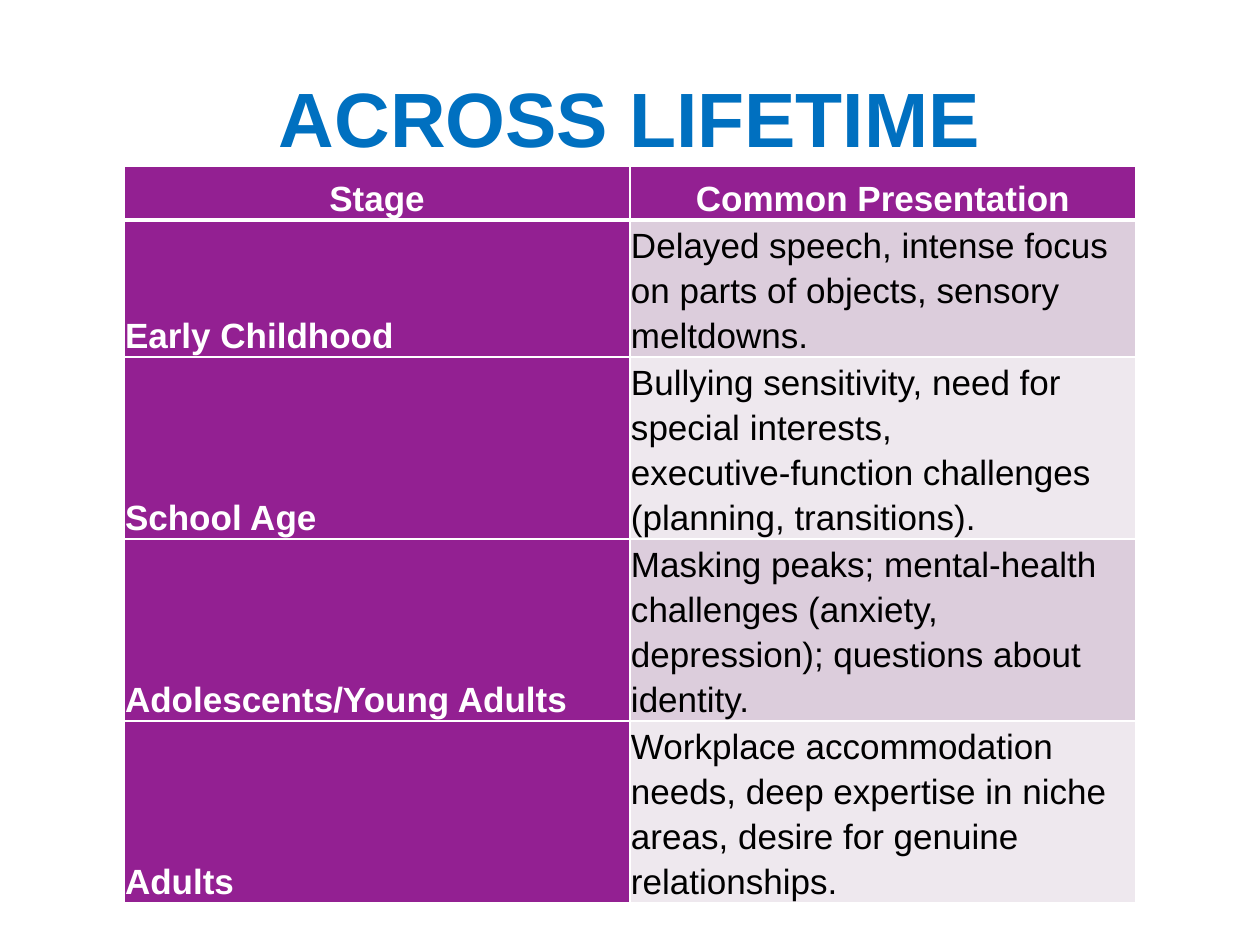
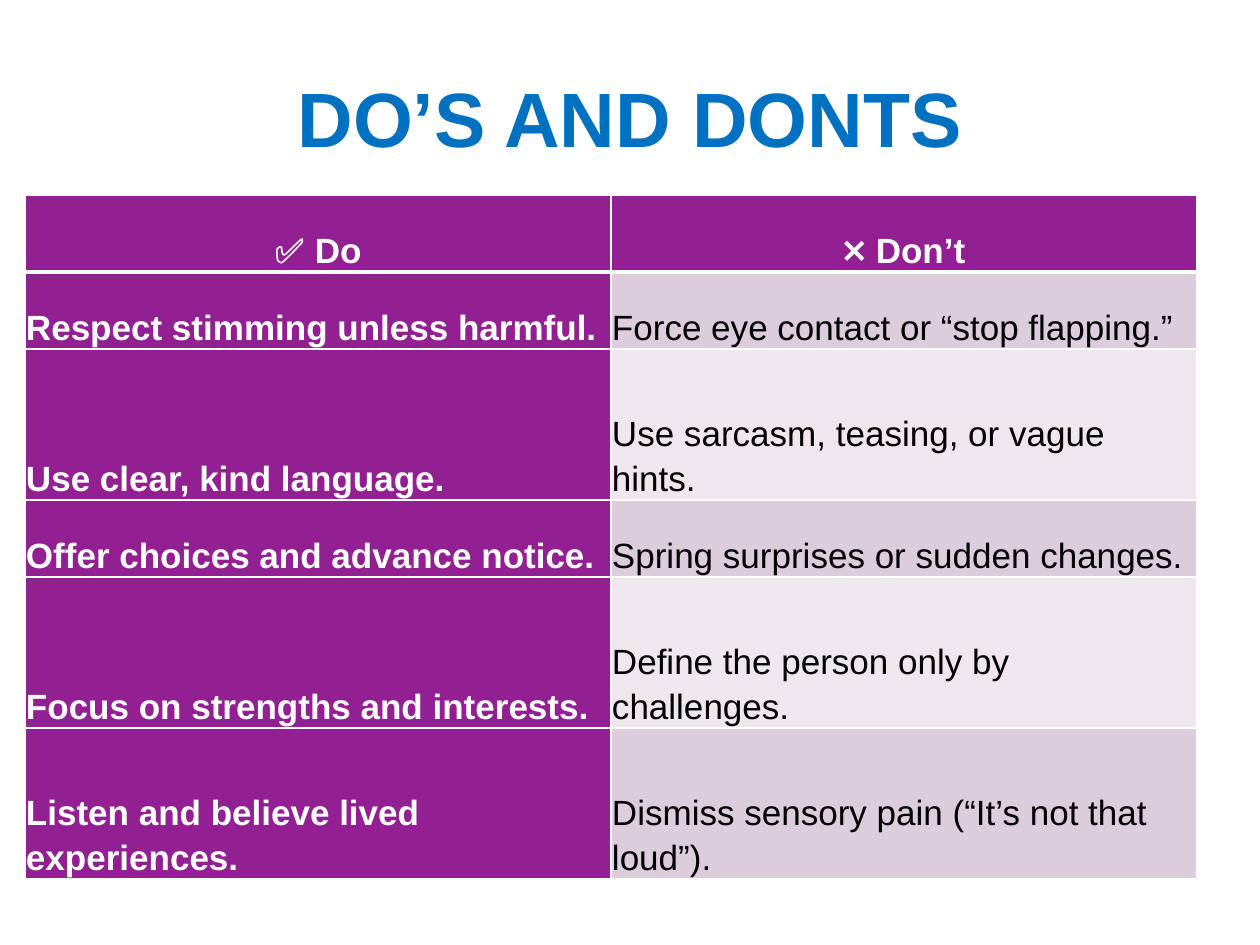
from lxml import etree
from pptx import Presentation
from pptx.dml.color import RGBColor
from pptx.enum.text import MSO_ANCHOR, PP_ALIGN
from pptx.oxml.ns import qn
from pptx.util import Emu, Pt

CENTER, LEFT = PP_ALIGN.CENTER, PP_ALIGN.LEFT
MIDDLE, BOTTOM = MSO_ANCHOR.MIDDLE, MSO_ANCHOR.BOTTOM
TITLE_ONLY = 5
PX_PER_INCH = 126
SLIDE_SIZE = (1260, 945)

# Shared style
FONT = "Arial"
BLUE, PURPLE, WHITE, BLACK = "0070C0", "932092", "FFFFFF", "000000"
BANDS = ("DCCDDC", "EEE8EE")
TITLE_BOX = (63, 38, 1134, 158)
THIN, THICK = 1, 3

# Slide content: table rows, header first
LIFETIME_ROWS = [
    ("Stage", "Common Presentation"),
    ("Early Childhood",
     "Delayed speech, intense focus on parts of objects, sensory meltdowns."),
    ("School Age",
     "Bullying sensitivity, need for special interests, "
     "executive‑function challenges (planning, transitions)."),
    ("Adolescents/Young Adults",
     "Masking peaks; mental‑health challenges (anxiety, depression); "
     "questions about identity."),
    ("Adults",
     "Workplace accommodation needs, deep expertise in niche areas, "
     "desire for genuine relationships."),
]
ADVICE_ROWS = [
    ("✅ Do", "❌ Don’t"),
    ("Respect stimming unless harmful.", "Force eye contact or “stop flapping.”"),
    ("Use clear, kind language.", "Use sarcasm, teasing, or vague hints."),
    ("Offer choices and advance notice.", "Spring surprises or sudden changes."),
    ("Focus on strengths and interests.", "Define the person only by challenges."),
    ("Listen and believe lived experiences.",
     "Dismiss sensory pain (“It’s not that loud”)."),
]


def px(length):
    return Emu(round(length * 914400 / PX_PER_INCH))


def color(hex_code):
    return RGBColor.from_string(hex_code)


def write(frame, text, size=20, ink=BLACK, bold=False, align=LEFT, spacing=1.0):
    frame.word_wrap = True
    paragraph = frame.paragraphs[0]
    paragraph.alignment = align
    paragraph.line_spacing = spacing
    run = paragraph.add_run()
    run.text = text
    run.font.name = FONT
    run.font.size = Pt(size)
    run.font.bold = bold
    run.font.color.rgb = color(ink)


class Deck:
    def __init__(self):
        self.presentation = Presentation()
        self.presentation.slide_width, self.presentation.slide_height = map(px, SLIDE_SIZE)
        self.slide = None

    def add_slide(self, title):
        layout = self.presentation.slide_layouts[TITLE_ONLY]
        self.slide = self.presentation.slides.add_slide(layout)
        shape = self.slide.shapes.title
        shape.left, shape.top, shape.width, shape.height = map(px, TITLE_BOX)
        shape.text_frame.vertical_anchor = MIDDLE
        write(shape.text_frame, title, size=44, ink=BLUE, bold=True, align=CENTER)

    def add_table(self, left, top, column_width, row_heights, rows):
        column_count = len(rows[0])
        frame = self.slide.shapes.add_table(
            len(rows), column_count, px(left), px(top),
            px(column_width * column_count), px(sum(row_heights)))
        table = frame.table
        table.horz_banding = False
        for column in table.columns:
            column.width = px(column_width)
        for row, height in zip(table.rows, row_heights):
            row.height = px(height)
        for row_index, texts in enumerate(rows):
            for column_index, text in enumerate(texts):
                self.fill_cell(table.cell(row_index, column_index),
                               text, row_index, column_index)

    def fill_cell(self, cell, text, row_index, column_index):
        is_header = row_index == 0
        is_label = is_header or column_index == 0
        cell.margin_left = cell.margin_right = px(1)
        cell.margin_top = cell.margin_bottom = px(1)
        cell.vertical_anchor = BOTTOM
        cell.fill.solid()
        cell.fill.fore_color.rgb = color(PURPLE if is_label else BANDS[(row_index - 1) % 2])
        write(cell.text_frame, text, ink=WHITE if is_label else BLACK, bold=is_label,
              align=CENTER if is_header else LEFT, spacing=1.15)
        self.add_borders(cell, top=THICK if row_index == 1 else THIN,
                         bottom=THICK if is_header else THIN)

    def add_borders(self, cell, top, bottom):
        properties = cell._tc.get_or_add_tcPr()
        widths = {"a:lnL": THIN, "a:lnR": THIN, "a:lnT": top, "a:lnB": bottom}
        # Border lines come before the fill in the cell properties
        for position, (tag, width) in enumerate(widths.items()):
            line = etree.Element(qn(tag), w=str(Pt(width)))
            fill = etree.SubElement(line, qn("a:solidFill"))
            etree.SubElement(fill, qn("a:srgbClr"), val=WHITE)
            properties.insert(position, line)


def main():
    deck = Deck()

    # Presentation by stage of life
    deck.add_slide("ACROSS LIFETIME")
    deck.add_table(124, 166, 506, [54] + [137] + [182] * 3, LIFETIME_ROWS)

    # Advice in two columns
    deck.add_slide("DO’S AND DONTS")
    deck.add_table(25, 195, 586, [77, 77, 151, 77, 151, 151], ADVICE_ROWS)

    deck.presentation.save("out.pptx")


if __name__ == "__main__":
    main()
